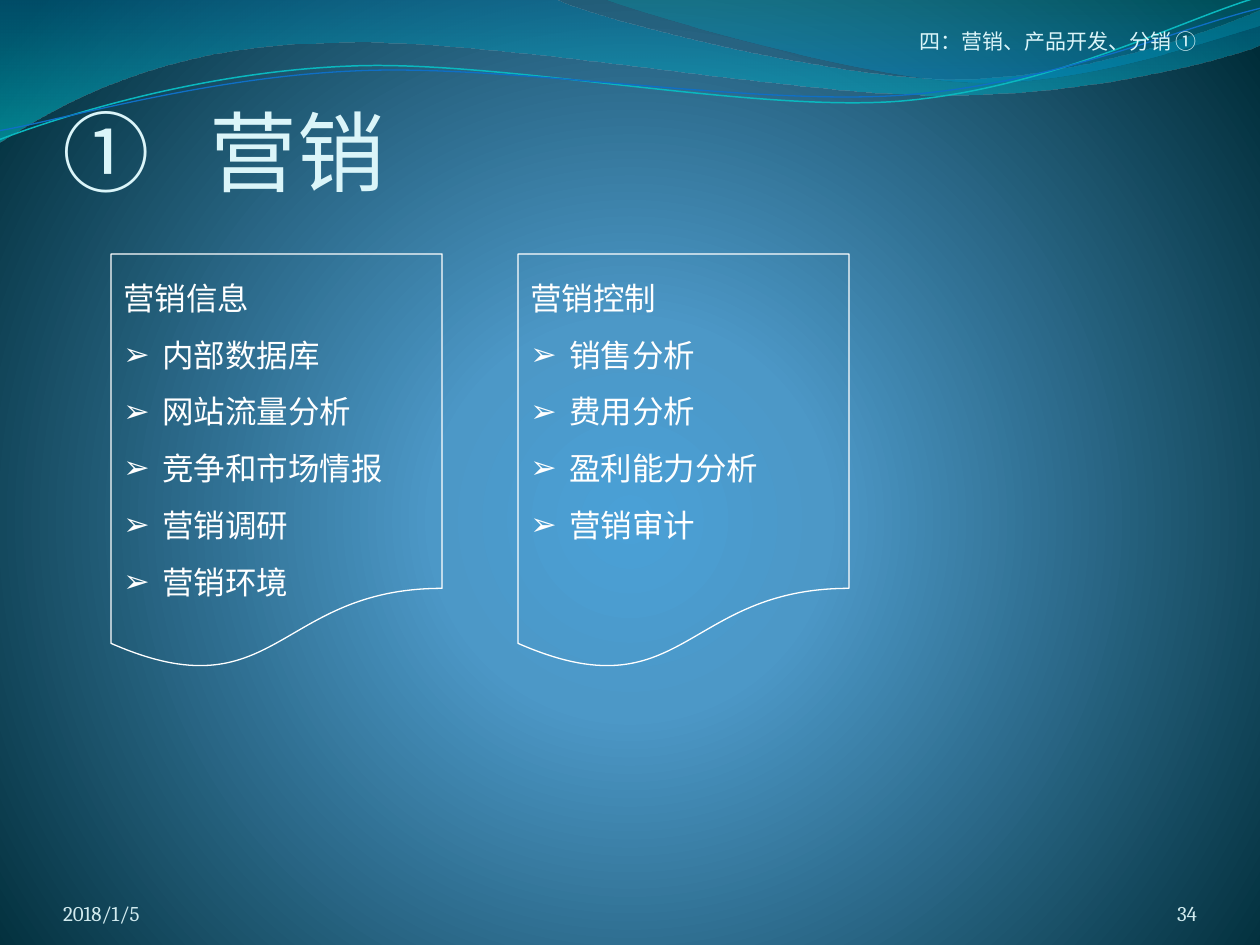
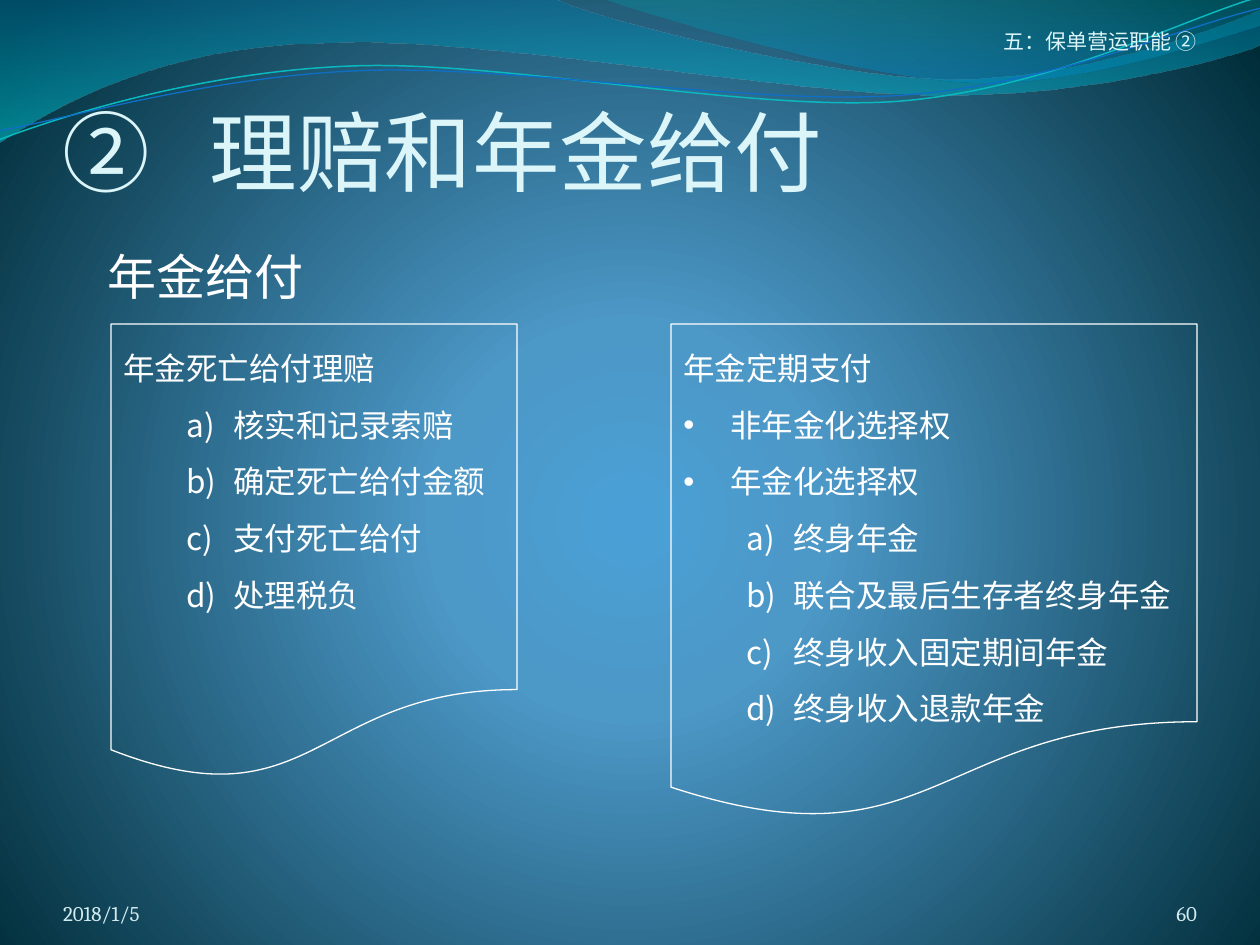
from dataclasses import dataclass

from lxml.etree import SubElement, fromstring
from pptx import Presentation
from pptx.dml.color import RGBColor
from pptx.enum.shapes import MSO_SHAPE as Preset
from pptx.enum.text import MSO_ANCHOR as Anchor, PP_ALIGN as Align
from pptx.oxml.ns import nsdecls, qn
from pptx.util import Pt

EMU_PER_PX = 914400 / 126


@dataclass(frozen=True)
class TextStyle:
    font: str
    size: int
    color: str
    line_spacing: float = 1.0


@dataclass(frozen=True)
class Theme:
    title = TextStyle("Calibri", 50, "DBF5F9")
    header = TextStyle("Calibri", 12, "DBF5F9")
    footer = TextStyle("Cambria", 12, "D1EAEE")
    subtitle = TextStyle("Cambria", 28, "FFFFFF", 1.6)
    card = TextStyle("Times New Roman", 18, "FFFFFF", 1.5)
    outline = "FFFFFF"
    # Gradient stops: position %, colour, opacity %
    background = [(0, "4AA0D6", 100), (25, "4C98C7", 100), (100, "002C38", 100)]
    wide_wave = [(0, "0074A1", 45), (100, "00C6CF", 55)]
    right_wave = [(0, "00A1A9", 30), (80, "008BBF", 45)]
    teal_line = "0AB8BF"
    blue_line = "0F6FC6"


@dataclass(frozen=True)
class ListStyle:
    level: int
    margin: int
    hanging: int
    bullet_font: str
    bullet_tag: str
    bullet_attribute: str
    bullet_value: str


THEME = Theme()
ARROW = ListStyle(0, 39, 39, "Arial", "a:buChar", "char", "➢")
DOT = ListStyle(0, 47, 47, "Arial", "a:buChar", "char", "•")
LETTER = ListStyle(1, 110, 47, "+mj-ea", "a:buAutoNum", "type", "alphaLcParenR")

# Outlines: a pair is a straight step, six numbers are a Bézier step.
WIDE_WAVE = [(0, 0), (554, -1), (600, 21, 837, 79, 955, 79),
             (1075, 79, 1207, 33, 1260, 11), (1261, 45),
             (1239, 55, 1096, 96, 940, 95), (784, 95, 481, 35, 324, 43),
             (163, 45, 58, 105, -1, 142), (0, 0)]
RIGHT_WAVE = [(603, -1), (641, 14, 859, 78, 969, 82),
              (1079, 87, 1211, 40, 1260, 26), (1260, 0), (603, -1)]
TEAL_LINE = [(-3, 110), (58, 90, 199, 52, 349, 53),
             (499, 53, 745, 118, 897, 114), (1049, 109, 1185, 45, 1261, 27)]
BLUE_LINE = [(-3, 101), (57, 94, 207, 57, 357, 58),
             (508, 58, 750, 112, 902, 108), (1053, 104, 1187, 52, 1263, 38)]
LINE_ROTATION = 357.3


def px(length):
    return round(length * EMU_PER_PX)


def set_gradient(target, fill, stops, direction):
    """Give the fill of a shape or master its stops and direction."""
    fill.gradient()
    stop_xml = ""
    for position, color, opacity in stops:
        alpha = f'<a:alpha val="{opacity * 1000}"/>' if opacity < 100 else ""
        stop_xml += (f'<a:gs pos="{position * 1000}">'
                     f'<a:srgbClr val="{color}">{alpha}</a:srgbClr></a:gs>')
    gradient = fromstring(
        f'<a:gradFill {nsdecls("a")} rotWithShape="1">'
        f'<a:gsLst>{stop_xml}</a:gsLst>{direction}</a:gradFill>')
    old = target.element.find(".//" + qn("a:gradFill"))
    old.getparent().replace(old, gradient)


def set_background(master):
    set_gradient(
        master, master.background.fill, THEME.background,
        '<a:path path="circle">'
        '<a:fillToRect l="10000" t="110000" r="10000" b="100000"/></a:path>')


def add_outline(slide, steps, close):
    """Draw the steps as a freeform, with true curves for Bézier steps."""
    points = [(px(x), px(y)) for step in steps
              for x, y in zip(step[::2], step[1::2])]
    builder = slide.shapes.build_freeform(*points[0])
    builder.add_line_segments(points[1:], close=close)
    shape = builder.convert_to_shape()
    shape.shadow.inherit = False
    segments = iter(shape.element.findall(".//" + qn("a:lnTo")))
    for step in steps[1:]:
        segment = next(segments)
        if len(step) == 6:
            segment.tag = qn("a:cubicBezTo")
            for extra in (next(segments), next(segments)):
                segment.append(extra[0])
                extra.getparent().remove(extra)
    return shape


def add_wave_band(slide):
    for steps, stops in ((WIDE_WAVE, THEME.wide_wave),
                         (RIGHT_WAVE, THEME.right_wave)):
        wave = add_outline(slide, steps, close=True)
        wave.line.fill.background()
        set_gradient(wave, wave.fill, stops, '<a:lin ang="5400000" scaled="1"/>')
    for steps, color, width in ((TEAL_LINE, THEME.teal_line, 0.85),
                                (BLUE_LINE, THEME.blue_line, 0.75)):
        curve = add_outline(slide, steps, close=False)
        curve.rotation = LINE_ROTATION
        curve.fill.background()
        set_line(curve, color, width)


def set_line(shape, color, width):
    shape.line.color.rgb = RGBColor.from_string(color)
    shape.line.width = Pt(width)


def format_paragraph(paragraph, style, align=Align.LEFT):
    paragraph.alignment = align
    paragraph.line_spacing = style.line_spacing
    for run in paragraph.runs:
        run.font.name = style.font
        run.font.size = Pt(style.size)
        run.font.color.rgb = RGBColor.from_string(style.color)


def add_text(slide, box, text, style, align=Align.LEFT,
             anchor=Anchor.BOTTOM, insets=(0, 0, 0, 0)):
    """Add a one-paragraph text box; insets are left, top, right, bottom."""
    text_box = slide.shapes.add_textbox(*map(px, box))
    frame = text_box.text_frame
    frame.word_wrap = True
    frame.vertical_anchor = anchor
    (frame.margin_left, frame.margin_top,
     frame.margin_right, frame.margin_bottom) = map(px, insets)
    frame.text = text
    format_paragraph(frame.paragraphs[0], style, align)
    return frame.paragraphs[0]


def add_title(slide, number, title):
    paragraph = add_text(slide, (63, 76, 1009, 127), f"{number}\t{title}",
                         THEME.title, insets=(0, 6, 0, 0))
    tabs = SubElement(paragraph._p.get_or_add_pPr(), qn("a:tabLst"))
    SubElement(tabs, qn("a:tab"), pos=str(px(147)), algn="l")


def set_list_style(paragraph, style):
    paragraph.level = style.level
    properties = paragraph._p.get_or_add_pPr()
    properties.set("marL", str(px(style.margin)))
    properties.set("indent", str(-px(style.hanging)))
    SubElement(properties, qn("a:buFont"), typeface=style.bullet_font)
    SubElement(properties, qn(style.bullet_tag),
               {style.bullet_attribute: style.bullet_value})


def add_card(slide, box, heading, items):
    """Add a document shape with a heading and (list style, text) items."""
    card = slide.shapes.add_shape(Preset.FLOWCHART_DOCUMENT, *map(px, box))
    card.shadow.inherit = False
    card.fill.background()
    set_line(card, THEME.outline, 0.75)
    frame = card.text_frame
    frame.word_wrap = True
    frame.vertical_anchor = Anchor.TOP
    frame.text = heading
    format_paragraph(frame.paragraphs[0], THEME.card)
    for list_style, text in items:
        paragraph = frame.add_paragraph()
        paragraph.text = text
        set_list_style(paragraph, list_style)
        format_paragraph(paragraph, THEME.card)


def add_base_slide(presentation, header, number, title, page):
    """Add a slide with the wave band, header, title and footer."""
    slide = presentation.slides.add_slide(presentation.slide_layouts[6])
    add_wave_band(slide)
    add_text(slide, (63, 876, 294, 50), "2018/1/5", THEME.footer)
    add_text(slide, (1092, 876, 105, 50), page, THEME.footer, Align.RIGHT)
    add_text(slide, (799, 0, 398, 54), header, THEME.header,
             Align.RIGHT, insets=(0, 6, 0, 0))
    add_title(slide, number, title)
    return slide


def with_style(list_style, *texts):
    return [(list_style, text) for text in texts]


def build_marketing(presentation):
    slide = add_base_slide(presentation, "四：营销、产品开发、分销 ①",
                           "①", "营销", "34")
    cards = [
        ("营销信息", ["内部数据库", "网站流量分析", "竞争和市场情报", "营销调研", "营销环境"]),
        ("营销控制", ["销售分析", "费用分析", "盈利能力分析", "营销审计"]),
    ]
    for column, (heading, texts) in enumerate(cards):
        add_card(slide, (111 + 407 * column, 254, 331, 417), heading,
                 with_style(ARROW, *texts))


def build_annuity_payment(presentation):
    slide = add_base_slide(presentation, "五：保单营运职能 ②",
                           "②", "理赔和年金给付", "60")
    add_text(slide, (96, 205, 375, 108), "年金给付", THEME.subtitle,
             anchor=Anchor.TOP, insets=(12, 6, 12, 6))
    add_card(slide, (111, 324, 406, 456), "年金死亡给付理赔",
             with_style(LETTER, "核实和记录索赔", "确定死亡给付金额",
                        "支付死亡给付", "处理税负"))
    add_card(slide, (671, 324, 526, 496), "年金定期支付",
             with_style(DOT, "非年金化选择权", "年金化选择权")
             + with_style(LETTER, "终身年金", "联合及最后生存者终身年金",
                          "终身收入固定期间年金", "终身收入退款年金"))


def main():
    presentation = Presentation()
    presentation.slide_width, presentation.slide_height = px(1260), px(945)
    set_background(presentation.slide_master)
    build_marketing(presentation)
    build_annuity_payment(presentation)
    presentation.save("out.pptx")


if __name__ == "__main__":
    main()
